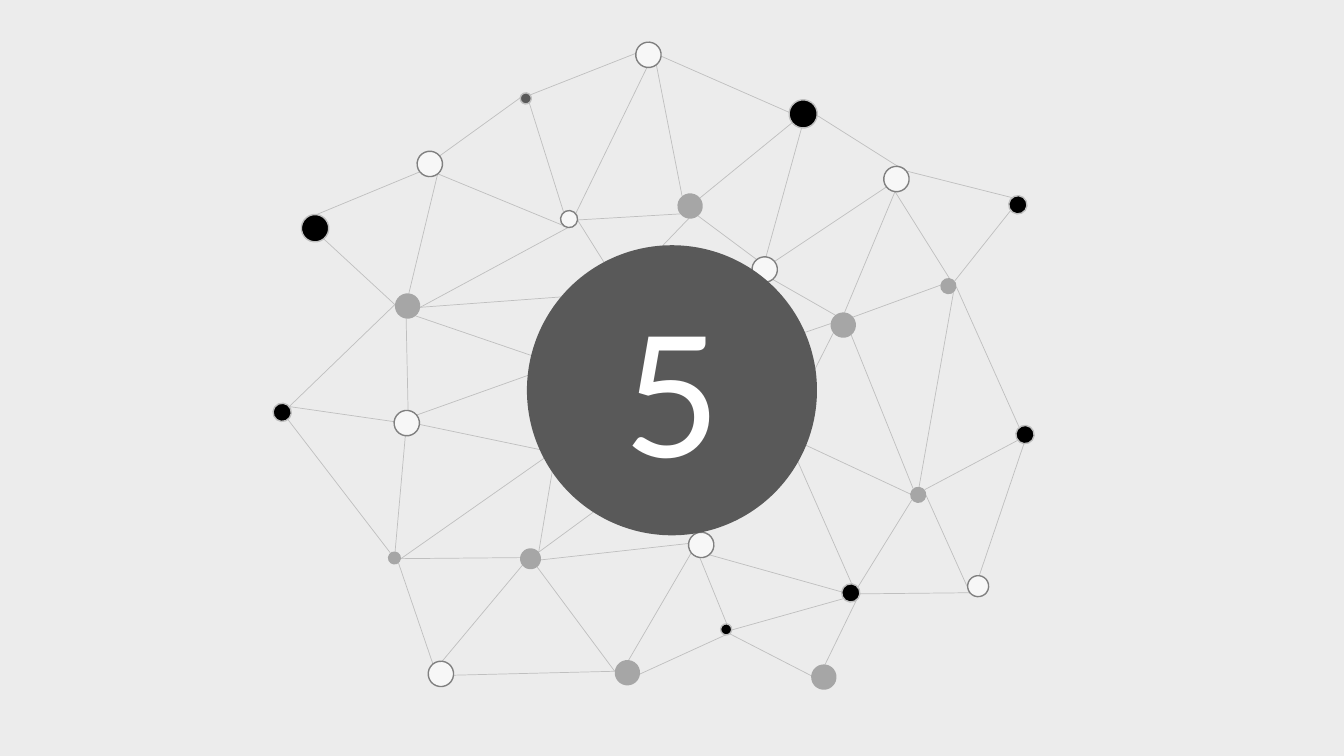
import math

import lxml.etree
import pptx
import pptx.dml.color
import pptx.enum.shapes
import pptx.enum.text
import pptx.oxml.ns
import pptx.util

Cm = pptx.util.Cm
Pt = pptx.util.Pt
RGBColor = pptx.dml.color.RGBColor

BACKGROUND = RGBColor(0xEC, 0xEC, 0xEC)
BLACK = RGBColor(0x00, 0x00, 0x00)
DARK = RGBColor(0x59, 0x59, 0x59)
MEDIUM = RGBColor(0x80, 0x80, 0x80)
GREY = RGBColor(0xA6, 0xA6, 0xA6)
PALE = RGBColor(0xBF, 0xBF, 0xBF)
LIGHT = RGBColor(0xF7, 0xF7, 0xF7)
WHITE = RGBColor(0xFF, 0xFF, 0xFF)

OUTLINES = {LIGHT: MEDIUM, BLACK: PALE, DARK: PALE, GREY: None}
NODE_TURN = 186.2
SITE_STEP = 45

NODES = {
    "A": (0.61, 9.39, 0.46, BLACK),
    "B": (3.75, 9.66, 0.64, LIGHT),
    "C": (6.87, 13.08, 0.53, GREY),
    "D": (11.17, 12.73, 0.64, LIGHT),
    "E": (3.44, 13.06, 0.33, GREY),
    "F": (9.84, 0.38, 0.64, LIGHT),
    "G": (16.64, 11.47, 0.41, GREY),
    "H": (18.15, 13.77, 0.53, LIGHT),
    "I": (10.89, 4.19, 0.64, GREY),
    "J": (19.33, 9.95, 0.46, BLACK),
    "K": (1.44, 4.75, 0.69, BLACK),
    "L": (4.33, 3.13, 0.64, LIGHT),
    "M": (13.74, 1.87, 0.71, BLACK),
    "N": (14.75, 7.19, 0.64, GREY),
    "O": (12.77, 5.79, 0.64, LIGHT),
    "P": (16.09, 3.51, 0.64, LIGHT),
    "Q": (6.75, 1.48, 0.28, DARK),
    "R": (7.84, 4.52, 0.43, LIGHT),
    "S": (3.77, 6.71, 0.64, GREY),
    "T": (4.61, 15.98, 0.64, LIGHT),
    "U": (17.4, 6.21, 0.41, GREY),
    "V": (14.26, 16.06, 0.64, GREY),
    "W": (19.15, 4.16, 0.46, BLACK),
    "X": (9.31, 15.95, 0.64, GREY),
    "Y": (14.94, 13.94, 0.46, BLACK),
    "Z": (11.8, 14.86, 0.28, BLACK),
}

INNER_ANCHORS = {
    "a": (7.25, 8.16, 0.28),
    "b": (7.64, 10.42, 0.43),
    "c": (9.3, 11.27, 0.46),
    "d": (9.15, 6.24, 0.46),
    "e": (13.27, 10.09, 0.69),
    "f": (10.78, 8.26, 0.64),
}

LINKS = """
A1-E5 E6-B2 B7-a1 C7-b3 G5-N1 E0-C4 c3-C7 U1-G6 J2-H6 H3-G0
K1-S4 L7-Q4 N5-O1 R0-d5 F2-R7 M4-F0 M2-O6 P6-M0 K6-L3 F4-Q7
Q1-R5 P7-W5 U7-W3 P2-U6 J3-G7 T0-X4 T6-C3 T5-E1 e1-Y6 e0-G4
G3-Y7 H3-Y0 V6-Y1 C0-D4 Z6-D2 Z0-Y3 D1-Y4 X4-C1 B0-b4 A7-B4
S2-B6 S1-a5 L1-S6 L1-R2 A7-S4 S0-R2 S0-d3 M3-I7 F1-I5 R0-I3
d7-I2 O5-I1 P3-O7 U4-N7 P2-N6 N3-e6 f0-N4 X6-D3 X0-Z2 Z1-V4
b4-E0 U0-J5
""".split()


def add_circle(slide, left, top, diameter, fill, outline):
    circle = slide.shapes.add_shape(
        pptx.enum.shapes.MSO_SHAPE.OVAL,
        Cm(left), Cm(top), Cm(diameter), Cm(diameter))
    circle.shadow.inherit = False
    circle.fill.solid()
    circle.fill.fore_color.rgb = fill
    if outline is None:
        circle.line.fill.background()
    else:
        circle.line.color.rgb = outline
        circle.line.width = Pt(1)
    return circle


def site_position(site, left, top):
    x, y, diameter = (NODES | INNER_ANCHORS)[site[0]][:3]
    angle = math.radians(NODE_TURN - 180 + SITE_STEP * int(site[1]))
    return (Cm(left + x + diameter / 2 * math.cos(angle)),
            Cm(top + y + diameter / 2 * math.sin(angle)))


def add_network(slide, left, top):
    for link in LINKS:
        start, end = link.split("-")
        edge = slide.shapes.add_connector(
            pptx.enum.shapes.MSO_CONNECTOR.STRAIGHT,
            *site_position(start, left, top), *site_position(end, left, top))
        edge.line.color.rgb = PALE
        edge.line.width = Pt(0.5)
        lxml.etree.SubElement(
            edge._element.spPr, pptx.oxml.ns.qn("a:effectLst"))
    for x, y, diameter, fill in NODES.values():
        node = add_circle(slide, left + x - diameter / 2,
                          top + y - diameter / 2, diameter, fill, OUTLINES[fill])
        node.rotation = NODE_TURN


def add_section_number(slide, left, top, diameter, number):
    disc = add_circle(slide, left, top, diameter, DARK, None)
    frame = disc.text_frame
    frame.vertical_anchor = pptx.enum.text.MSO_ANCHOR.MIDDLE
    frame.text = number
    paragraph = frame.paragraphs[0]
    paragraph.alignment = pptx.enum.text.PP_ALIGN.CENTER
    paragraph.font.name = "Lato"
    paragraph.font.size = Pt(120)
    paragraph.font.color.rgb = WHITE


def add_section_slide(deck, number):
    slide = deck.slides.add_slide(deck.slide_layouts.get_by_name("Blank"))
    slide.background.fill.solid()
    slide.background.fill.fore_color.rgb = BACKGROUND
    add_network(slide, 6.5, 1)
    add_section_number(slide, 13.28, 6.18, 7.31, number)


def main():
    deck = pptx.Presentation()
    deck.slide_width = Cm(33.87)
    deck.slide_height = Cm(19.05)
    add_section_slide(deck, "5")
    deck.save("out.pptx")


if __name__ == "__main__":
    main()
